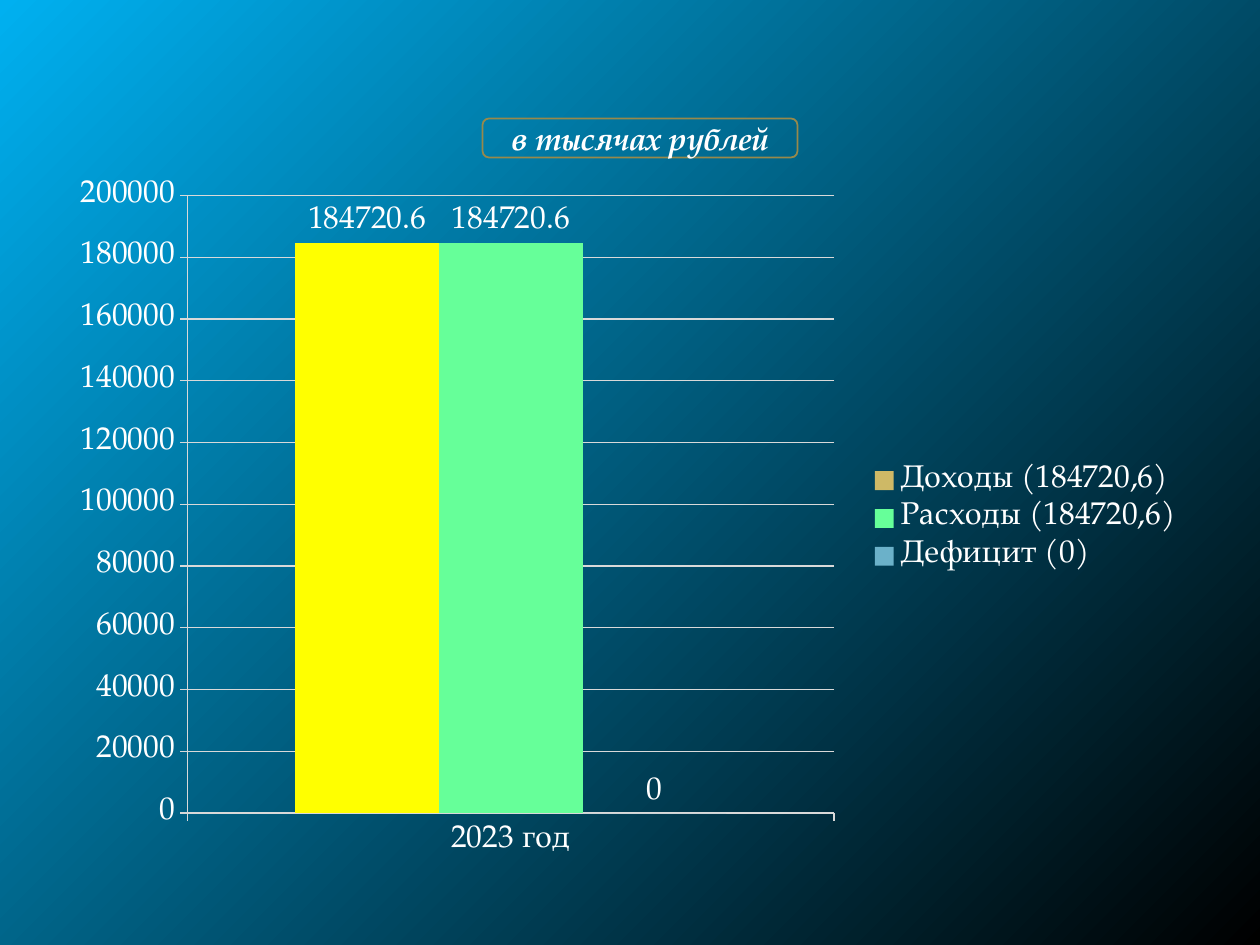
from dataclasses import dataclass
from typing import Optional

import lxml.etree
import pptx
import pptx.chart.axis
import pptx.chart.data
import pptx.chart.series
import pptx.dml.color
import pptx.dml.line
import pptx.enum.chart
import pptx.enum.shapes
import pptx.enum.text
import pptx.oxml
import pptx.oxml.ns
import pptx.slide
import pptx.util
from pptx.util import Inches

FONT = "TeX Gyre Pagella"
COLORS = {
    "sky": "00B0F0",
    "black": "000000",
    "white": "FFFFFF",
    "grid": "D9D9D9",
    "frame": "98894B",
    "income": "CEB966",
    "income_bar": "FFFF00",
    "expense": "66FF99",
    "deficit": "6BB1C9",
}


@dataclass
class BudgetItem:
    name: str
    value: float
    color: str
    bar_color: Optional[str] = None


BUDGET = [
    BudgetItem("Доходы (184720,6)", 184720.6, "income", "income_bar"),
    BudgetItem("Расходы (184720,6)", 184720.6, "expense"),
    BudgetItem("Дефицит (0)", 0, "deficit"),
]


def rgb(name: str) -> pptx.dml.color.RGBColor:
    return pptx.dml.color.RGBColor.from_string(COLORS[name])


def style_font(font, bold: bool = False, italic: bool = False) -> None:
    font.name = FONT
    font.size = pptx.util.Pt(18)
    font.bold = bold
    font.italic = italic
    font.color.rgb = rgb("white")


def style_line(line: pptx.dml.line.LineFormat, color: str, width: float) -> None:
    line.color.rgb = rgb(color)
    line.width = pptx.util.Pt(width)


def paint_background(slide: pptx.slide.Slide) -> None:
    fill = slide.background.fill
    fill.gradient()
    for stop, color in zip(fill.gradient_stops, ("sky", "black")):
        stop.color.rgb = rgb(color)
    linear = slide.background._cSld.find(".//" + pptx.oxml.ns.qn("a:lin"))
    radial = pptx.oxml.parse_xml(
        f'<a:path {pptx.oxml.ns.nsdecls("a")} path="circle">'
        '<a:fillToRect r="100000" b="100000"/></a:path>'
    )
    linear.getparent().replace(linear, radial)


def style_series(series: pptx.chart.series.BarSeries, item: BudgetItem) -> None:
    series.format.fill.solid()
    series.format.fill.fore_color.rgb = rgb(item.color)
    if item.bar_color:
        bar_fill = series.points[0].format.fill
        bar_fill.solid()
        bar_fill.fore_color.rgb = rgb(item.bar_color)
    labels = series.data_labels
    labels.show_value = True
    labels.position = pptx.enum.chart.XL_LABEL_POSITION.OUTSIDE_END
    style_font(labels.font)


def style_axis(axis: pptx.chart.axis._BaseAxis) -> None:
    axis.major_tick_mark = pptx.enum.chart.XL_TICK_MARK.OUTSIDE
    axis.minor_tick_mark = pptx.enum.chart.XL_TICK_MARK.NONE
    style_line(axis.format.line, "grid", 0.75)
    style_font(axis.tick_labels.font)


def place_plot(plot_area, left: float, top: float, width: float, height: float) -> None:
    for old_layout in plot_area.findall(pptx.oxml.ns.qn("c:layout")):
        plot_area.remove(old_layout)
    layout = pptx.oxml.parse_xml(f'<c:layout {pptx.oxml.ns.nsdecls("c")}/>')
    manual = lxml.etree.SubElement(layout, pptx.oxml.ns.qn("c:manualLayout"))
    settings = [
        ("layoutTarget", "inner"), ("xMode", "edge"), ("yMode", "edge"),
        ("x", left), ("y", top), ("w", width), ("h", height),
    ]
    for tag, value in settings:
        lxml.etree.SubElement(manual, pptx.oxml.ns.qn(f"c:{tag}")).set("val", str(value))
    plot_area.insert(0, layout)


def add_budget_chart(slide: pptx.slide.Slide) -> None:
    data = pptx.chart.data.CategoryChartData()
    data.categories = ["2023 год"]
    for item in BUDGET:
        data.add_series(item.name, [item.value])
    chart = slide.shapes.add_chart(
        pptx.enum.chart.XL_CHART_TYPE.COLUMN_CLUSTERED,
        Inches(0.5), Inches(1.33), Inches(9), Inches(5.57), data,
    ).chart
    chart.has_title = False
    style_font(chart.font)
    chart.has_legend = True
    chart.legend.position = pptx.enum.chart.XL_LEGEND_POSITION.RIGHT
    chart.legend.include_in_layout = False
    style_font(chart.legend.font)

    plot = chart.plots[0]
    plot.vary_by_categories = False
    plot.gap_width = 150
    plot.overlap = 0
    for series, item in zip(plot.series, BUDGET):
        style_series(series, item)

    for axis in (chart.category_axis, chart.value_axis):
        style_axis(axis)
    chart.value_axis.minimum_scale = 0
    chart.value_axis.maximum_scale = 200000
    chart.value_axis.major_unit = 20000
    chart.value_axis.has_major_gridlines = True
    style_line(chart.value_axis.major_gridlines.format.line, "grid", 0.75)
    plot_area = chart._chartSpace.find(".//" + pptx.oxml.ns.qn("c:plotArea"))
    place_plot(plot_area, 0.11, 0.04, 0.57, 0.88)


def add_unit_label(slide: pptx.slide.Slide) -> None:
    shape = slide.shapes.add_shape(
        pptx.enum.shapes.MSO_SHAPE.ROUNDED_RECTANGLE,
        Inches(3.83), Inches(0.94), Inches(2.5), Inches(0.31),
    )
    shape.shadow.inherit = False
    shape.fill.background()
    style_line(shape.line, "frame", 1)
    frame = shape.text_frame
    frame.word_wrap = True
    frame.vertical_anchor = pptx.enum.text.MSO_ANCHOR.MIDDLE
    paragraph = frame.paragraphs[0]
    paragraph.alignment = pptx.enum.text.PP_ALIGN.CENTER
    run = paragraph.add_run()
    run.text = "в тысячах рублей"
    style_font(run.font, bold=True, italic=True)


def main() -> None:
    presentation = pptx.Presentation()
    presentation.slide_width = Inches(10)
    presentation.slide_height = Inches(7.5)
    slide = presentation.slides.add_slide(presentation.slide_layouts[6])
    paint_background(slide)
    add_budget_chart(slide)
    add_unit_label(slide)
    presentation.save("out.pptx")


if __name__ == "__main__":
    main()
